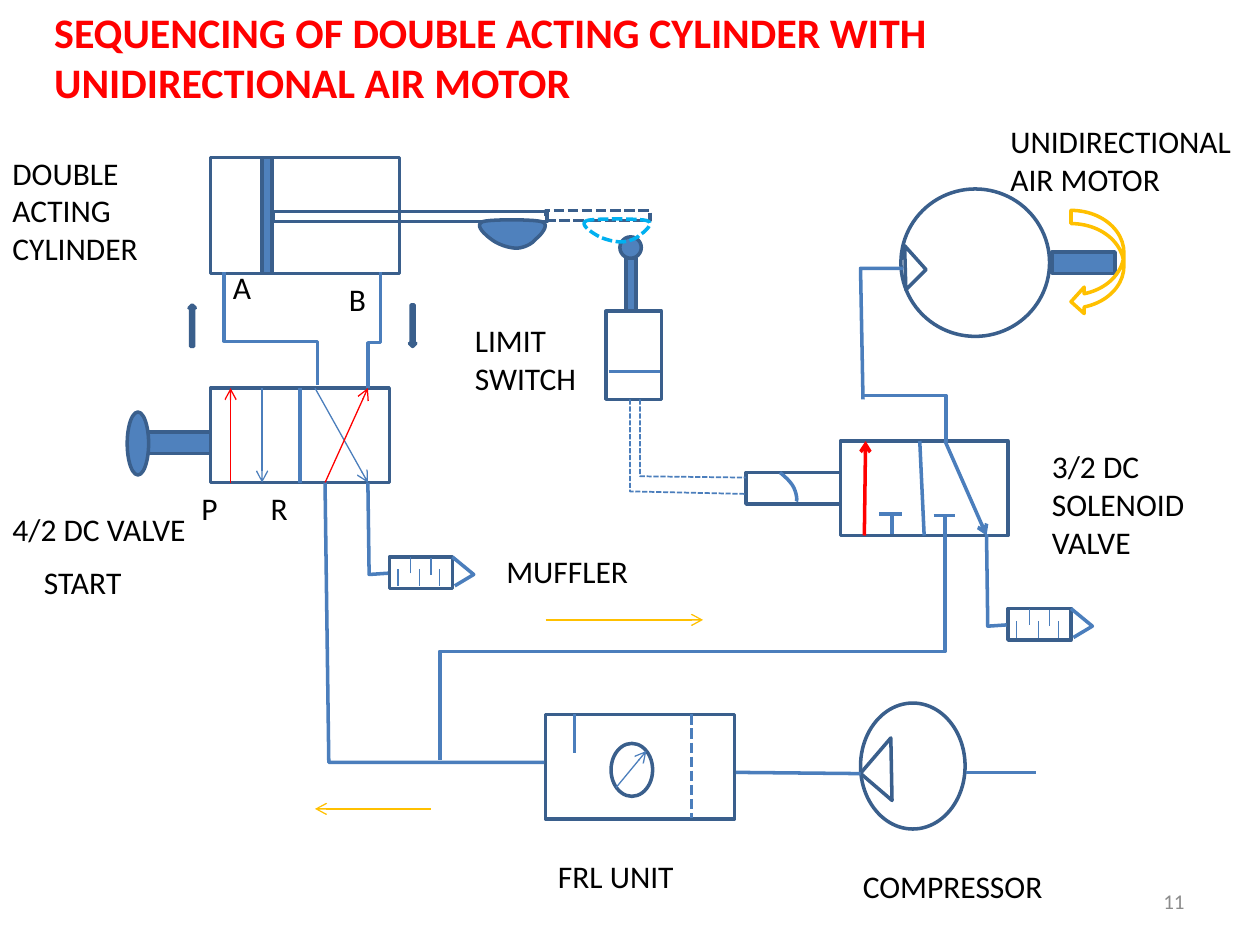
from lxml import etree
from pptx import Presentation
from pptx.dml.color import RGBColor
from pptx.enum.dml import MSO_LINE
from pptx.enum.shapes import MSO_CONNECTOR, MSO_SHAPE
from pptx.enum.text import MSO_ANCHOR, MSO_AUTO_SIZE, PP_ALIGN
from pptx.oxml.ns import qn
from pptx.util import Cm, Pt

RECT, OVAL = MSO_SHAPE.RECTANGLE, MSO_SHAPE.OVAL
TRIANGLE, TURN = MSO_SHAPE.RIGHT_TRIANGLE, MSO_SHAPE.CURVED_LEFT_ARROW
UP, DOWN = MSO_SHAPE.UP_ARROW, MSO_SHAPE.DOWN_ARROW
STRAIGHT, DASH = MSO_CONNECTOR.STRAIGHT, MSO_LINE.SQUARE_DOT
LEFT, RIGHT = PP_ALIGN.LEFT, PP_ALIGN.RIGHT
TOP, MIDDLE = MSO_ANCHOR.TOP, MSO_ANCHOR.MIDDLE
FIXED = MSO_AUTO_SIZE.NONE

BLUE = RGBColor(0x4F, 0x81, 0xBD)
EDGE = RGBColor(0x3A, 0x5F, 0x8C)
PIPE = RGBColor(0x4B, 0x7E, 0xBC)
RED = RGBColor(0xFF, 0x00, 0x00)
GOLD = RGBColor(0xFF, 0xC0, 0x00)
CYAN = RGBColor(0x00, 0xB0, 0xF0)
BLACK = RGBColor(0x00, 0x00, 0x00)
GREY = RGBColor(0x8C, 0x8C, 0x8C)

FONT = "Calibri"
GRID = 2.54
THIN, MEDIUM, THICK = 0.75, 1, 2

TITLE = "SEQUENCING OF DOUBLE ACTING CYLINDER WITH UNIDIRECTIONAL AIR MOTOR"
TITLE_PLACE = (0.33, 0, 9.08, 0.91)
PAGE_NUMBER = ("11", (7.17, 6.95, 2.33, 0.4))

LABELS = [
    ("COMPRESSOR", (6.75, 6.83, 2.25, 0.42)),
    ("FRL UNIT", (4.33, 6.75, 1.92, 0.4)),
    ("4/2 DC VALVE", (0, 4, 1.75, 0.4)),
    ("DOUBLE ACTING CYLINDER", (0, 1.17, 1.58, 1.31)),
    ("LIMIT SWITCH", (3.67, 2.5, 1.08, 0.71)),
    ("UNIDIRECTIONAL AIR MOTOR", (7.92, 0.92, 2.08, 0.71)),
    ("3/2 DC SOLENOID VALVE", (8.25, 3.5, 1.5, 1.01)),
    ("MUFFLER", (3.92, 4.33, 1.83, 0.42)),
    ("START", (0.25, 4.42, 1.17, 0.42)),
    ("A", (1.75, 2.08, 0.25, 0.4)),
    ("B", (2.67, 2.17, 0.25, 0.42)),
    ("P", (1.5, 3.83, 0.33, 0.4)),
    ("R", (2.05, 3.83, 0.25, 0.4)),
]

PARTS = [
    ("cylinder", RECT, (1.67, 1.25, 1.5, 0.92), {}),
    ("piston", RECT, (2.08, 1.25, 0.08, 0.92), {"fill": BLUE}),
    ("rod", RECT, (2.17, 1.68, 2.17, 0.08), {}),
    ("extended rod", RECT, (4.33, 1.67, 0.83, 0.08), {"dash": DASH}),
    ("4/2 valve", RECT, (1.67, 3.08, 1.42, 0.75), {}),
    ("button stem", RECT, (1.17, 3.43, 0.5, 0.17), {"fill": BLUE}),
    ("button", OVAL, (1.01, 3.27, 0.17, 0.5), {"fill": BLUE}),
    ("frl unit", RECT, (4.33, 5.67, 1.5, 0.83), {}),
    ("gauge", OVAL, (4.85, 5.9, 0.33, 0.42), {}),
    ("compressor", OVAL, (6.83, 5.58, 0.83, 1), {}),
    ("compressor mark", TRIANGLE, (6.91, 5.92, 0.33, 0.37), {"turn": 40.6}),
    ("limit switch", RECT, (4.81, 2.47, 0.44, 0.7), {}),
    ("switch stem", RECT, (4.97, 2.05, 0.08, 0.42), {"fill": BLUE}),
    ("switch roller", OVAL, (4.92, 1.88, 0.17, 0.17), {"fill": BLUE}),
    ("3/2 valve", RECT, (6.67, 3.5, 1.33, 0.75), {}),
    ("solenoid", RECT, (5.92, 3.75, 0.75, 0.25), {}),
    ("motor", OVAL, (7.15, 1.5, 1.18, 1.17), {}),
    ("motor shaft", RECT, (8.35, 2, 0.5, 0.17), {"fill": BLUE}),
    ("rotation", TURN, (8.5, 1.67, 0.42, 0.83), {"color": GOLD}),
    ("flow up", UP, (1.5, 2.42, 0.05, 0.33), {"fill": BLUE}),
    ("flow down", DOWN, (3.25, 2.42, 0.05, 0.33), {"fill": BLUE}),
]

ARROW = {"width": THIN, "arrow": True}
LINES = [
    ((1.83, 3.83), (1.83, 3.08), {**ARROW, "color": RED}),
    ((2.08, 3.08), (2.08, 3.83), ARROW),
    ((2.5, 3.08), (2.92, 3.83), ARROW),
    ((2.58, 3.83), (2.92, 3.08), {**ARROW, "color": RED}),
    ((5.49, 5.67), (5.49, 6.49), {"dash": DASH}),
    ((4.89, 6.25), (5.13, 5.96), ARROW),
    ((4.56, 5.67), (4.56, 5.98), {}),
    ((6.83, 6.14), (5.84, 6.13), {}),
    ((7.67, 6.13), (8.22, 6.13), {}),
    ((4.83, 2.95), (5.24, 2.95), {}),
    ((6.86, 4.25), (6.87, 3.5), {"color": RED, "arrow": True}),
    ((7.08, 4.24), (7.08, 4.08), {}),
    ((6.98, 4.08), (7.16, 4.08), {}),
    ((7.5, 3.5), (7.83, 4.25), {"arrow": True}),
    ((7.5, 4.25), (7.5, 4.09), {}),
    ((7.41, 4.09), (7.58, 4.09), {}),
    ((3.42, 6.42), (2.5, 6.42), {**ARROW, "color": GOLD}),
    ((4.33, 4.92), (5.58, 4.92), {**ARROW, "color": GOLD}),
]

SIGNAL = {"width": MEDIUM, "dash": DASH}
PIPES = [
    ([(2.58, 3.83), (2.61, 6.05), (4.32, 6.05)], {}),
    ([(3.49, 6.03), (3.49, 5.17), (7.5, 5.17), (7.5, 4.25)], {}),
    ([(3.02, 2.16), (3.02, 2.72), (2.92, 2.72), (2.92, 3.08)], {}),
    ([(1.78, 2.16), (1.78, 2.71), (2.52, 2.71), (2.52, 3.06)], {}),
    ([(7.17, 2.13), (6.83, 2.13), (6.85, 3.17)], {}),
    ([(6.86, 3.14), (7.51, 3.14), (7.51, 3.51)], {}),
    ([(7.18, 1.95), (7.35, 2.14), (7.19, 2.3)], {"close": True, "color": EDGE}),
    ([(5.08, 3.17), (5.08, 3.78), (5.92, 3.79)], SIGNAL),
    ([(5, 3.17), (5, 3.9), (5.92, 3.92)], SIGNAL),
]

SOLENOID_CURVE = [(6.19, 3.75), (6.24, 3.79), (6.28, 3.83), (6.3, 3.87),
                  (6.32, 3.91), (6.33, 3.97), (6.32, 3.98)]
CAM_CURVE = [(0, 0), (-0.07, 0.03), (0.03, 0.11), (0.07, 0.14), (0.12, 0.18),
             (0.21, 0.21), (0.27, 0.21), (0.32, 0.21), (0.39, 0.18), (0.42, 0.14),
             (0.46, 0.11), (0.54, 0.02), (0.47, 0), (0.4, -0.02), (0.06, -0.02), (0, 0)]
CAMS = [
    ((3.83, 1.76), 1, {"fill": BLUE, "color": EDGE}),
    ((4.66, 1.75), 0.81, {"dash": DASH, "color": CYAN}),
]

MUFFLERS = [(3.09, 4.42), (8, 4.83)]
MUFFLER_TIP = [(0.5, 0), (0.67, 0.14), (0.52, 0.23)]
MUFFLER_PIPE = [(-0.17, -0.59), (-0.16, 0.14), (-0.01, 0.13)]
MUFFLER_TEETH = [(0.07, 0.1), (0.17, 0), (0.24, 0.1), (0.33, 0.01), (0.4, 0.1)]
TOOTH = 0.13

deck = Presentation()
deck.slide_width, deck.slide_height = Cm(10 * GRID), Cm(7.5 * GRID)
page = deck.slides.add_slide(deck.slide_layouts[5])


def lengths(values):
    return [Cm(value * GRID) for value in values]


def shifted(points, origin, stretch=1):
    return [(origin[0] + x, origin[1] + y * stretch) for x, y in points]


def style_line(line, color, width, dash):
    line.color.rgb = color
    line.width = Pt(width)
    if dash:
        line.dash_style = dash


def style_shape(shape, fill=None, color=EDGE, width=THICK, dash=None):
    shape.shadow.inherit = False
    if fill:
        shape.fill.solid()
        shape.fill.fore_color.rgb = fill
    else:
        shape.fill.background()
    style_line(shape.line, color, width, dash)


def add_part(kind, place, turn=0, **style):
    shape = page.shapes.add_shape(kind, *lengths(place))
    shape.rotation = turn
    style_shape(shape, **style)
    return shape


def add_line(start, end, color=PIPE, width=THICK, dash=None, arrow=False):
    line = page.shapes.add_connector(STRAIGHT, *lengths(start + end))
    style_line(line.line, color, width, dash)
    if arrow:
        etree.SubElement(line.line._get_or_add_ln(), qn("a:tailEnd"), type="arrow")
    etree.SubElement(line._element.spPr, qn("a:effectLst"))
    return line


def add_path(points, close=False, color=PIPE, **style):
    start, *others = [lengths(point) for point in points]
    builder = page.shapes.build_freeform(*start)
    builder.add_line_segments(others, close=close)
    style_shape(builder.convert_to_shape(), color=color, **style)


def curve_points(controls, steps=10):
    points = [controls[0]]
    for first in range(0, len(controls) - 1, 3):
        a, b, c, d = controls[first:first + 4]
        for step in range(1, steps + 1):
            t = step / steps
            weights = ((1 - t) ** 3, 3 * t * (1 - t) ** 2, 3 * t * t * (1 - t), t ** 3)
            points.append(tuple(sum(w * p[axis] for w, p in zip(weights, (a, b, c, d)))
                                for axis in (0, 1)))
    return points


def write(box, text, place, size=18, color=BLACK, bold=False, align=LEFT, anchor=TOP):
    box.left, box.top, box.width, box.height = lengths(place)
    frame = box.text_frame
    frame.word_wrap, frame.auto_size, frame.vertical_anchor = True, FIXED, anchor
    para = frame.paragraphs[0]
    para.alignment = align
    span = para.add_run()
    span.text = text
    span.font.name, span.font.size, span.font.bold = FONT, Pt(size), bold
    span.font.color.rgb = color


parts = {name: add_part(kind, place, **style) for name, kind, place, style in PARTS}
for start, end, style in LINES:
    add_line(start, end, **style)
for points, style in PIPES:
    add_path(points, **style)

divider = add_line((2.38, 3.08), (2.38, 3.83))
divider.begin_connect(parts["4/2 valve"], 0)
divider.end_connect(parts["4/2 valve"], 2)
divider = add_line((7.32, 4.25), (7.3, 3.5))
divider.begin_connect(parts["3/2 valve"], 2)

add_path(curve_points(SOLENOID_CURVE))
for origin, stretch, style in CAMS:
    add_path(shifted(curve_points(CAM_CURVE), origin, stretch), close=True, **style)

for origin in MUFFLERS:
    add_part(RECT, origin + (0.5, 0.25))
    add_path(shifted(MUFFLER_TIP, origin))
    add_path(shifted(MUFFLER_PIPE, origin))
    for x, y in shifted(MUFFLER_TEETH, origin):
        add_line((x, y + TOOTH), (x, y), width=THIN)

write(page.shapes.title, TITLE, TITLE_PLACE, size=24, color=RED, bold=True)
for text, place in LABELS:
    write(page.shapes.add_textbox(*lengths(place)), text, place)
number, place = PAGE_NUMBER
write(page.shapes.add_textbox(*lengths(place)), number, place,
      size=12, color=GREY, align=RIGHT, anchor=MIDDLE)

deck.save("out.pptx")
